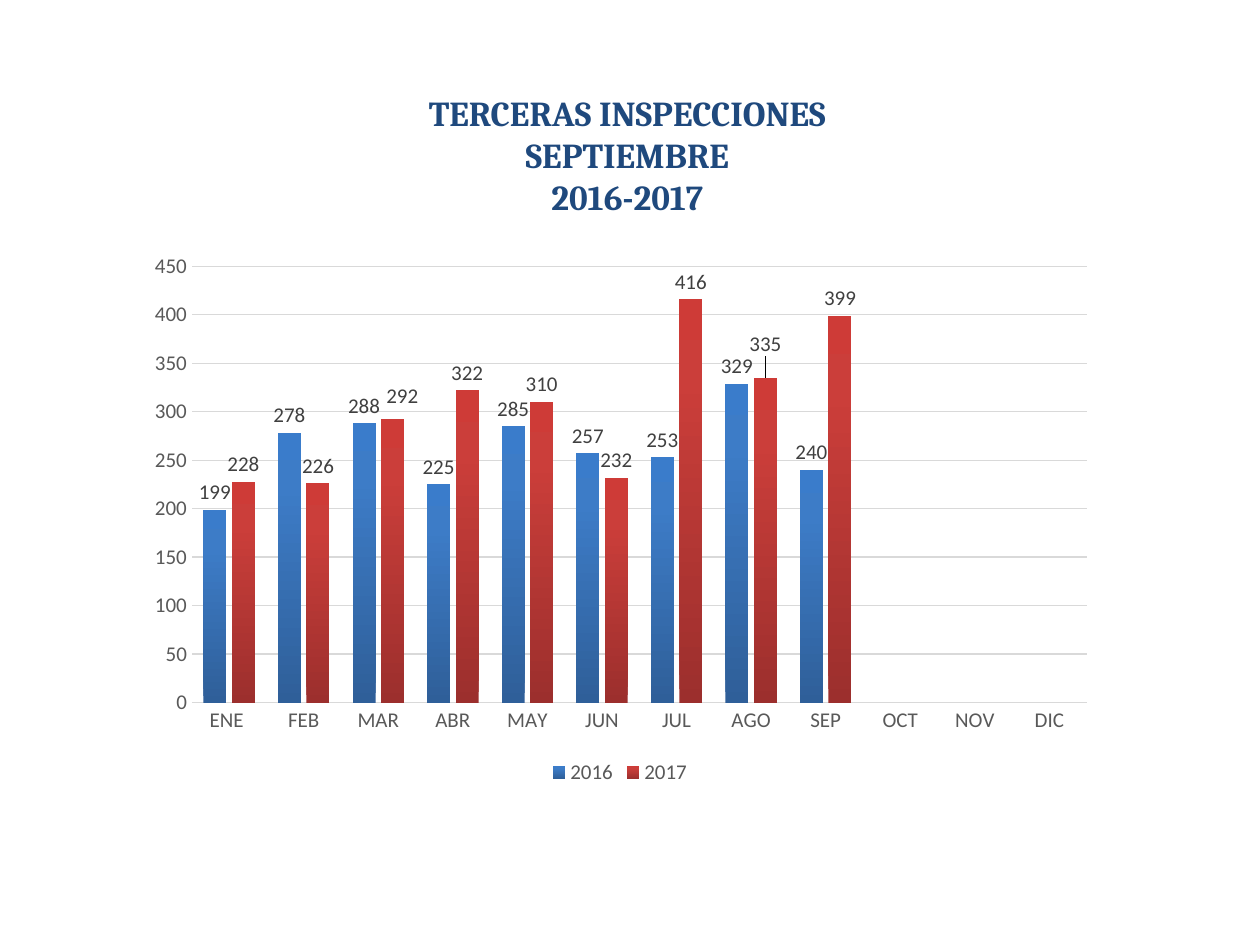
from dataclasses import dataclass

from lxml import etree
from pptx import Presentation
from pptx.chart.data import CategoryChartData
from pptx.dml.color import RGBColor
from pptx.enum.chart import XL_CHART_TYPE, XL_LABEL_POSITION, XL_LEGEND_POSITION, XL_TICK_MARK
from pptx.enum.text import MSO_AUTO_SIZE, PP_ALIGN
from pptx.oxml import parse_xml
from pptx.oxml.ns import nsdecls, qn
from pptx.util import Inches, Pt

COLUMNS = XL_CHART_TYPE.COLUMN_CLUSTERED
LABEL_ABOVE = XL_LABEL_POSITION.OUTSIDE_END
LEGEND_BOTTOM = XL_LEGEND_POSITION.BOTTOM
NO_TICK = XL_TICK_MARK.NONE
FIT_TEXT = MSO_AUTO_SIZE.SHAPE_TO_FIT_TEXT
CENTER = PP_ALIGN.CENTER


@dataclass(frozen=True)
class Theme:
    title_font: str = "Cambria"
    chart_font: str = "Calibri"
    title_size: int = 20
    chart_size: int = 12
    title_color: str = "1F497D"
    axis_color: str = "595959"
    label_color: str = "404040"
    grid_color: str = "D9D9D9"
    # Stops as (percent, color), from the foot of the column upwards
    column_gradients: tuple = (
        ((0, "2F5F99"), (80, "3D7CC7"), (100, "3A7CCB")),
        ((0, "9C2F2D"), (80, "CB3E3A"), (100, "CE3B37")),
    )


TITLE_LINES = ("TERCERAS INSPECCIONES", "SEPTIEMBRE", "2016-2017")
MONTHS = ("ENE ", "FEB", "MAR", "ABR", "MAY", "JUN", "JUL", "AGO", "SEP", "OCT", "NOV", "DIC")
INSPECTIONS = {
    "2016": (199, 278, 288, 225, 285, 257, 253, 329, 240, None, None, None),
    "2017": (228, 226, 292, 322, 310, 232, 416, 335, 399, None, None, None),
}
# Label shifts as fractions of the chart, by series and month
LABEL_SHIFTS = {
    ("2017", "MAR"): {"x": 0.01, "y": -0.01},
    ("2017", "AGO"): {"x": 0, "y": -0.03},
}
PLOT_LAYOUT = {"layoutTarget": "inner", "xMode": "edge", "yMode": "edge",
               "x": 0.06, "y": 0.04, "w": 0.92, "h": 0.8}


def format_font(font, *, name, size, color, bold=False):
    font.name = name
    font.size = Pt(size)
    font.bold = bold
    font.color.rgb = RGBColor.from_string(color)


def format_line(line, color, width):
    line.color.rgb = RGBColor.from_string(color)
    line.width = Pt(width)


def manual_layout(settings):
    layout = parse_xml(f"<c:layout {nsdecls('c')}><c:manualLayout/></c:layout>")
    for name, value in settings.items():
        etree.SubElement(layout[0], qn(f"c:{name}")).set("val", str(value))
    return layout


def set_gradient(fill_format, stops):
    """Fill with a gradient that runs upwards through any number of stops."""
    fill_format.gradient()
    gradient = fill_format._fill._gradFill
    for child in list(gradient):
        gradient.remove(child)
    stop_list = etree.SubElement(gradient, qn("a:gsLst"))
    for percent, color in stops:
        stop = etree.SubElement(stop_list, qn("a:gs"), pos=str(percent * 1000))
        etree.SubElement(stop, qn("a:srgbClr"), val=color)
    etree.SubElement(gradient, qn("a:lin"), ang=str(270 * 60000), scaled="0")


class SlideBuilder:
    def __init__(self, slide, theme):
        self.slide = slide
        self.theme = theme

    def add_text(self, lines, left, top, width, height, **font_format):
        shape = self.slide.shapes.add_textbox(
            Inches(left), Inches(top), Inches(width), Inches(height))
        frame = shape.text_frame
        frame.word_wrap = True
        frame.auto_size = FIT_TEXT
        for index, line in enumerate(lines):
            paragraph = frame.add_paragraph() if index else frame.paragraphs[0]
            paragraph.alignment = CENTER
            run = paragraph.add_run()
            run.text = line
            format_font(run.font, **font_format)

    def format_chart_font(self, font, color):
        format_font(font, name=self.theme.chart_font, size=self.theme.chart_size, color=color)

    def add_column_chart(self, categories, series_values, left, top, width, height):
        data = CategoryChartData(number_format="General")
        data.categories = categories
        for name, values in series_values.items():
            data.add_series(name, values)
        chart = self.slide.shapes.add_chart(
            COLUMNS, Inches(left), Inches(top), Inches(width), Inches(height), data).chart
        chart.has_title = False
        self.format_chart_font(chart.font, self.theme.axis_color)
        self.style_axes(chart)
        chart.has_legend = True
        chart.legend.position = LEGEND_BOTTOM
        chart.legend.include_in_layout = False
        self.format_chart_font(chart.legend.font, self.theme.axis_color)

        plot = chart.plots[0]
        plot.gap_width = 100
        plot.overlap = -24
        plot.vary_by_categories = False
        for series, gradient in zip(plot.series, self.theme.column_gradients):
            set_gradient(series.format.fill, gradient)
            self.add_value_labels(series)

        plot_area = chart._chartSpace.chart.plotArea
        for layout in plot_area.findall(qn("c:layout")):
            plot_area.remove(layout)
        plot_area.insert(0, manual_layout(PLOT_LAYOUT))
        return chart

    def style_axes(self, chart):
        for axis in (chart.category_axis, chart.value_axis):
            axis.major_tick_mark = NO_TICK
            axis.minor_tick_mark = NO_TICK
            self.format_chart_font(axis.tick_labels.font, self.theme.axis_color)
        format_line(chart.category_axis.format.line, self.theme.grid_color, 1)
        value_axis = chart.value_axis
        value_axis.minimum_scale = 0
        value_axis.maximum_scale = 450
        value_axis.major_unit = 50
        value_axis.format.line.fill.background()
        value_axis.has_major_gridlines = True
        format_line(value_axis.major_gridlines.format.line, self.theme.grid_color, 0.75)

    def add_value_labels(self, series):
        labels = series.data_labels
        labels.show_value = True
        labels.position = LABEL_ABOVE
        self.format_chart_font(labels.font, self.theme.label_color)

    def shift_label(self, series, index, shift):
        label = series.points[index].data_label
        label.position = LABEL_ABOVE
        self.format_chart_font(label.font, self.theme.label_color)
        for position in series._element.iter(qn("c:idx")):
            if position.getparent().tag == qn("c:dLbl") and position.get("val") == str(index):
                position.addnext(manual_layout(shift))


def main():
    presentation = Presentation()
    presentation.slide_width = Inches(10)
    presentation.slide_height = Inches(7.5)
    theme = Theme()
    blank_layout = presentation.slide_layouts[6]
    builder = SlideBuilder(presentation.slides.add_slide(blank_layout), theme)

    builder.add_text(TITLE_LINES, 2.48, 0.68, 5, 1.11, name=theme.title_font,
                     size=theme.title_size, color=theme.title_color, bold=True)
    chart = builder.add_column_chart(MONTHS, INSPECTIONS, 1.06, 1.94, 7.72, 4.33)
    series_by_name = {series.name: series for series in chart.plots[0].series}
    for (year, month), shift in LABEL_SHIFTS.items():
        builder.shift_label(series_by_name[year], MONTHS.index(month), shift)

    presentation.save("out.pptx")


if __name__ == "__main__":
    main()
